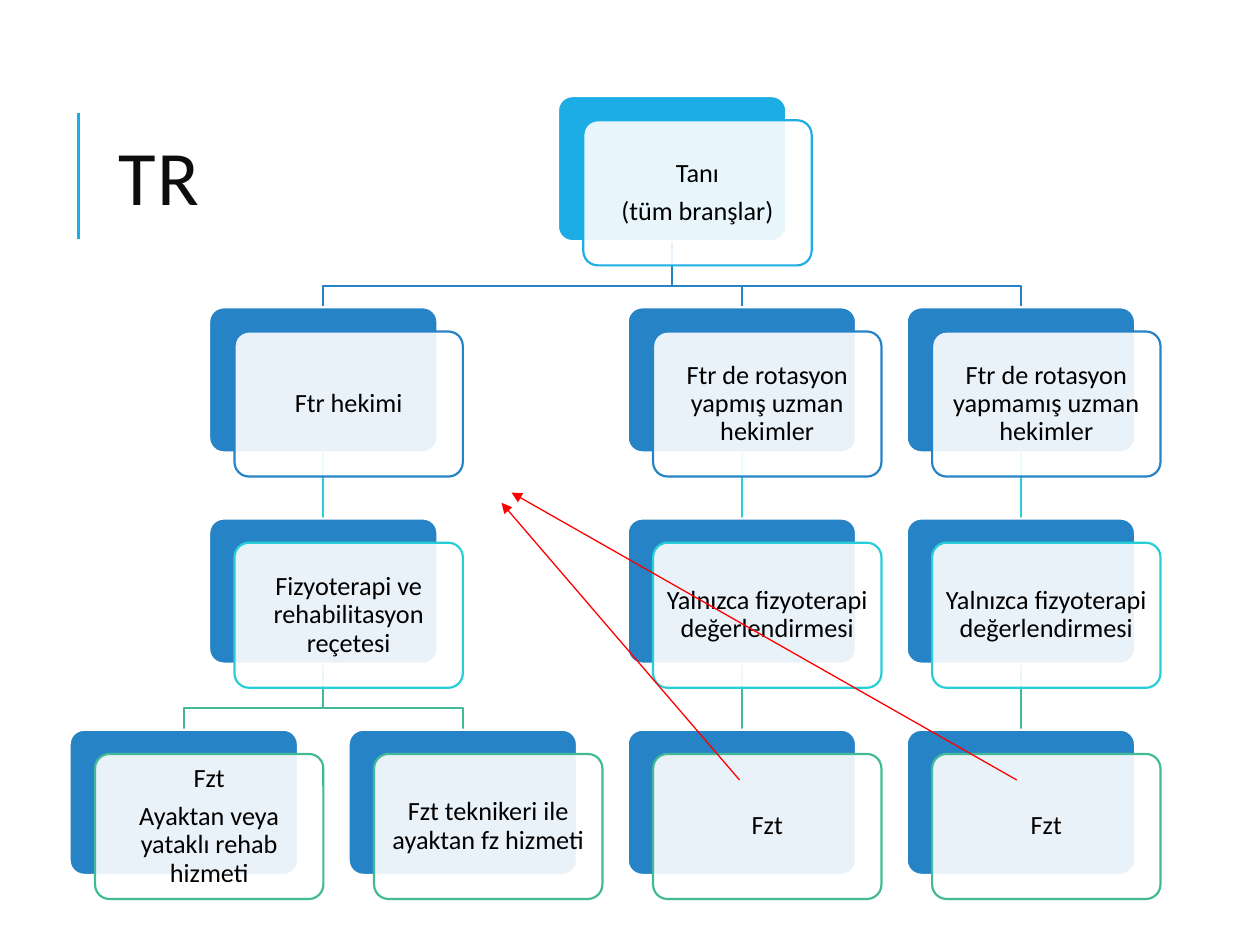
from dataclasses import dataclass

from lxml.etree import SubElement
from pptx import Presentation
from pptx.dml.color import RGBColor
from pptx.enum.shapes import MSO_CONNECTOR as Connector, MSO_SHAPE as Shape
from pptx.enum.text import MSO_ANCHOR as Anchor, PP_ALIGN as Align
from pptx.oxml.ns import qn
from pptx.util import Pt


@dataclass(frozen=True)
class Theme:
    font: str = "Calibri"
    title_size: float = 44
    card_size: float = 15
    title: str = "0D0D0D"
    text: str = "000000"
    paper: str = "FFFFFF"
    accent: str = "1CADE4"
    backing: str = "2683C6"
    arrow: str = "FF0000"
    levels: tuple = ("1CADE4", "2683C6", "27CED7", "42BA97")


THEME = Theme()
LEFT, TOP = 39.8, 54.9
COLUMN_STEP, ROW_STEP = 159.45, 120.7
CARD_WIDTH, CARD_HEIGHT = 130.5, 82.9
SHIFT_X, SHIFT_Y = 14.5, 13.8
BEND = 12.2
LINE_WIDTH = 1.25

CARDS = {
    "diagnosis": (1.75, 0, ["Tanı", "(tüm branşlar)"]),
    "physiatrist": (0.5, 1, ["Ftr hekimi"]),
    "rotated": (2, 1, ["Ftr de rotasyon yapmış uzman hekimler"]),
    "unrotated": (3, 1, ["Ftr de rotasyon yapmamış uzman hekimler"]),
    "prescription": (0.5, 2, ["Fizyoterapi ve rehabilitasyon reçetesi"]),
    "rotated_review": (2, 2, ["Yalnızca fizyoterapi değerlendirmesi"]),
    "unrotated_review": (3, 2, ["Yalnızca fizyoterapi değerlendirmesi"]),
    "therapist": (0, 3, ["Fzt", "Ayaktan veya yataklı rehab hizmeti"]),
    "technician": (1, 3, ["Fzt teknikeri ile ayaktan fz hizmeti"]),
    "rotated_therapist": (2, 3, ["Fzt"]),
    "unrotated_therapist": (3, 3, ["Fzt"]),
}
LINKS = [
    ("unrotated_review", "unrotated_therapist"),
    ("unrotated", "unrotated_review"),
    ("diagnosis", "unrotated"),
    ("rotated_review", "rotated_therapist"),
    ("rotated", "rotated_review"),
    ("diagnosis", "rotated"),
    ("prescription", "technician"),
    ("prescription", "therapist"),
    ("physiatrist", "prescription"),
    ("diagnosis", "physiatrist"),
]
ARROWS = [((422.6, 445.7), (286.6, 287.3)), ((581, 445.7), (292.3, 281.5))]


def color(code):
    return RGBColor.from_string(code)


def write(shape, lines, *, size, ink, align, line_spacing, inset=None,
          space_after=0, tracking=0):
    frame = shape.text_frame
    frame.word_wrap = True
    frame.vertical_anchor = Anchor.MIDDLE
    if inset is not None:
        frame.margin_left = frame.margin_right = Pt(inset)
        frame.margin_top = frame.margin_bottom = Pt(inset)
    for index, line in enumerate(lines):
        para = frame.add_paragraph() if index else frame.paragraphs[0]
        para.alignment = align
        para.line_spacing = line_spacing
        para.space_after = Pt(space_after)
        span = para.add_run()
        span.text = line
        span.font.name = THEME.font
        span.font.size = Pt(size)
        span.font.color.rgb = color(ink)
        if tracking:
            span.font._element.set("spc", str(tracking * 100))


def add_line(page, start, end, ink, width, arrow=False):
    line = page.shapes.add_connector(
        Connector.STRAIGHT, *(Pt(value) for value in (*start, *end)))
    line.line.color.rgb = color(ink)
    line.line.width = Pt(width)
    if arrow:
        SubElement(line.line._get_or_add_ln(), qn("a:tailEnd"), type="triangle")
    SubElement(line._element.spPr, qn("a:effectLst"))


def add_elbow(page, points, ink):
    start, *rest = [(Pt(x), Pt(y)) for x, y in points]
    builder = page.shapes.build_freeform(*start)
    builder.add_line_segments(rest, close=False)
    elbow = builder.convert_to_shape()
    elbow.shadow.inherit = False
    elbow.fill.background()
    elbow.line.color.rgb = color(ink)
    elbow.line.width = Pt(LINE_WIDTH)


def card_corner(column, row):
    return LEFT + column * COLUMN_STEP, TOP + row * ROW_STEP


def add_link(page, parent, child):
    parent_column, parent_row, _ = CARDS[parent]
    child_column, child_row, _ = CARDS[child]
    parent_left, parent_top = card_corner(parent_column, parent_row)
    child_left, child_top = card_corner(child_column, child_row)
    start = parent_left + CARD_WIDTH / 2, parent_top + CARD_HEIGHT
    end = child_left + CARD_WIDTH / 2, child_top
    ink = THEME.levels[child_row]
    if parent_column == child_column:
        add_line(page, start, end, ink, LINE_WIDTH)
    else:
        bend = child_top - BEND
        add_elbow(page, [start, (start[0], bend), (end[0], bend), end], ink)


def add_panel(page, left, top, fill, outline, opacity=100):
    panel = page.shapes.add_shape(
        Shape.ROUNDED_RECTANGLE, Pt(left), Pt(top), Pt(CARD_WIDTH), Pt(CARD_HEIGHT))
    panel.adjustments[0] = 0.1
    panel.shadow.inherit = False
    panel.fill.solid()
    panel.fill.fore_color.rgb = color(fill)
    panel.line.color.rgb = color(outline)
    panel.line.width = Pt(LINE_WIDTH)
    if opacity < 100:
        tint = panel._element.spPr.find(qn("a:solidFill")).find(qn("a:srgbClr"))
        SubElement(tint, qn("a:alpha"), val=str(opacity * 1000))
    return panel


def add_card(page, column, row, lines):
    left, top = card_corner(column, row)
    backing = THEME.backing if row else THEME.accent
    add_panel(page, left, top, backing, THEME.paper)
    front = add_panel(page, left + SHIFT_X, top + SHIFT_Y, THEME.paper,
                      THEME.levels[row], opacity=90)
    write(front, lines, size=THEME.card_size, ink=THEME.text, align=Align.CENTER,
          line_spacing=0.9, inset=4.5, space_after=5.25)


def add_title(page, text):
    add_line(page, (44.9, 136.8), (44.9, 64.8), THEME.accent, 1.5)
    box = page.shapes.add_textbox(Pt(60.5), Pt(46), Pt(574), Pt(118))
    write(box, [text], size=THEME.title_size, ink=THEME.title, align=Align.LEFT,
          line_spacing=0.8, tracking=1)


def main():
    deck = Presentation()
    deck.slide_width, deck.slide_height = Pt(720), Pt(540)
    page = deck.slides.add_slide(deck.slide_layouts[6])
    add_title(page, "TR")
    for parent, child in LINKS:
        add_link(page, parent, child)
    for column, row, lines in CARDS.values():
        add_card(page, column, row, lines)
    for start, end in ARROWS:
        add_line(page, start, end, THEME.arrow, 0.75, arrow=True)
    deck.save("out.pptx")


if __name__ == "__main__":
    main()
